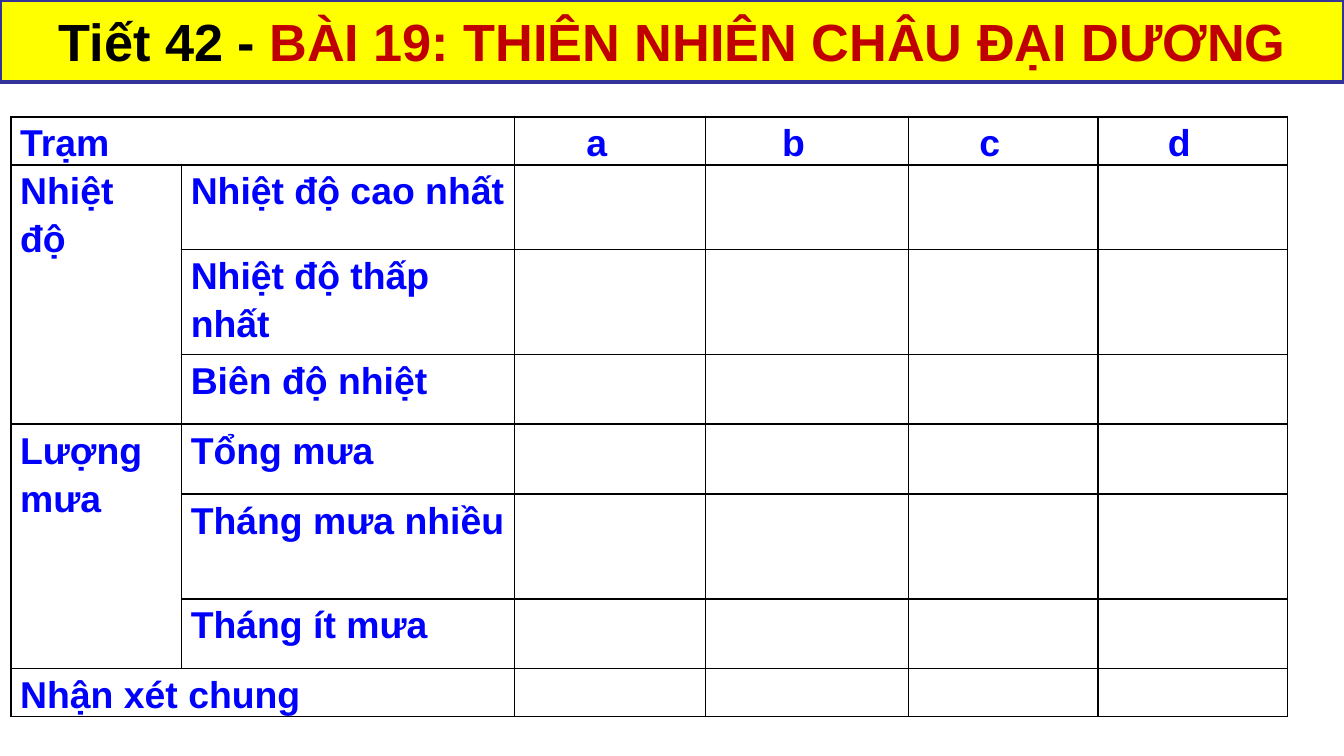
from lxml import etree
from pptx import Presentation, util as u
from pptx.dml.color import RGBColor
from pptx.enum import text as t
from pptx.oxml.ns import qn

HUES = {"ink": "000000", "blue": "0000FF", "red": "C00000",
        "band": "FFFF00", "edge": "333399"}
COLS = [1.27, 2.48, 1.42, 1.51, 1.41, 1.41]
ROWS = [0.26, 0.63, 0.78, 0.52, 0.52, 0.78, 0.52, 0.32]
CELLS = {
    (0, 0): "Trạm", (7, 0): "Nhận xét chung",
    (1, 0): "Nhiệt độ", (4, 0): "Lượng mưa",
    (1, 1): "Nhiệt độ cao nhất", (2, 1): "Nhiệt độ thấp nhất",
    (3, 1): "Biên độ nhiệt", (4, 1): "Tổng mưa",
    (5, 1): "Tháng mưa nhiều", (6, 1): "Tháng ít mưa",
    **{(0, col): name for col, name in enumerate("abcd", 2)},
}
SPANS = [((0, 0), (0, 1)), ((1, 0), (3, 0)), ((4, 0), (6, 0)), ((7, 0), (7, 1))]


def hue(name):
    """Return the named colour."""
    return RGBColor.from_string(HUES[name])


def write(para, words, size=20, color="blue", align=t.PP_ALIGN.LEFT,
          lines=1.0, before=0):
    """Add a bold run to a paragraph and format both."""
    para.alignment, para.line_spacing = align, lines
    para.space_before = u.Pt(before)
    run = para.add_run()
    run.text = words
    font = run.font
    font.name, font.size, font.bold = "Arial", u.Pt(size), True
    font.color.rgb = hue(color)


class Deck:
    """Hold the style and the current slide."""

    def __init__(self):
        """Open a wide deck with one title slide."""
        self.pres = Presentation()
        self.pres.slide_width = u.Inches(10)
        self.pres.slide_height = u.Inches(10 * 9 / 16)
        self.slide = self.pres.slides.add_slide(self.pres.slide_layouts[5])

    def title(self, parts, box):
        """Fill the title band with coloured parts."""
        band = self.slide.shapes.title
        band.left, band.top, band.width, band.height = map(u.Inches, box)
        band.fill.solid()
        band.fill.fore_color.rgb = hue("band")
        band.line.color.rgb = hue("edge")
        band.line.width = u.Pt(2)
        frame = band.text_frame
        frame.word_wrap, frame.auto_size = True, t.MSO_AUTO_SIZE.NONE
        frame.vertical_anchor = t.MSO_ANCHOR.MIDDLE
        frame.margin_left = frame.margin_right = u.Inches(0.13)
        frame.margin_top = frame.margin_bottom = u.Inches(0.07)
        for words, color in parts:
            write(frame.paragraphs[0], words, size=28, color=color,
                  align=t.PP_ALIGN.CENTER, before=6)

    def border(self, cell):
        """Draw thin lines on all sides of a cell."""
        props = cell._tc.get_or_add_tcPr()
        for spot, side in enumerate(("lnL", "lnR", "lnT", "lnB")):
            line = etree.Element(qn(f"a:{side}"), w=str(u.Pt(1)))
            fill = etree.SubElement(line, qn("a:solidFill"))
            etree.SubElement(fill, qn("a:srgbClr"), val=HUES["ink"])
            props.insert(spot, line)

    def table(self, left, top):
        """Build the station table."""
        grid = self.slide.shapes.add_table(
            len(ROWS), len(COLS), u.Inches(left), u.Inches(top),
            u.Inches(sum(COLS)), u.Inches(sum(ROWS))).table
        grid.first_row = grid.horz_banding = False
        for col, width in zip(grid.columns, COLS):
            col.width = u.Inches(width)
        for row, height in zip(grid.rows, ROWS):
            row.height = u.Inches(height)
        for cell in grid.iter_cells():
            cell.margin_left = cell.margin_right = u.Inches(0.07)
            cell.margin_top = cell.margin_bottom = 0
            cell.fill.background()
            self.border(cell)
        for start, end in SPANS:
            grid.cell(*start).merge(grid.cell(*end))
        for (row, col), words in CELLS.items():
            cell = grid.cell(row, col)
            if col != 1:
                cell.margin_right = u.Inches(0.27)
            align = t.PP_ALIGN.CENTER if col > 1 else t.PP_ALIGN.LEFT
            write(cell.text_frame.paragraphs[0], words,
                  align=align, lines=1.15)


def main():
    """Build and save the slide."""
    deck = Deck()
    deck.title([("Tiết 42 - ", "ink"),
                ("BÀI 19: THIÊN NHIÊN CHÂU ĐẠI DƯƠNG", "red")],
               (0, 0, 10, 0.61))
    deck.table(0.08, 0.87)
    deck.pres.save("out.pptx")


if __name__ == "__main__":
    main()
